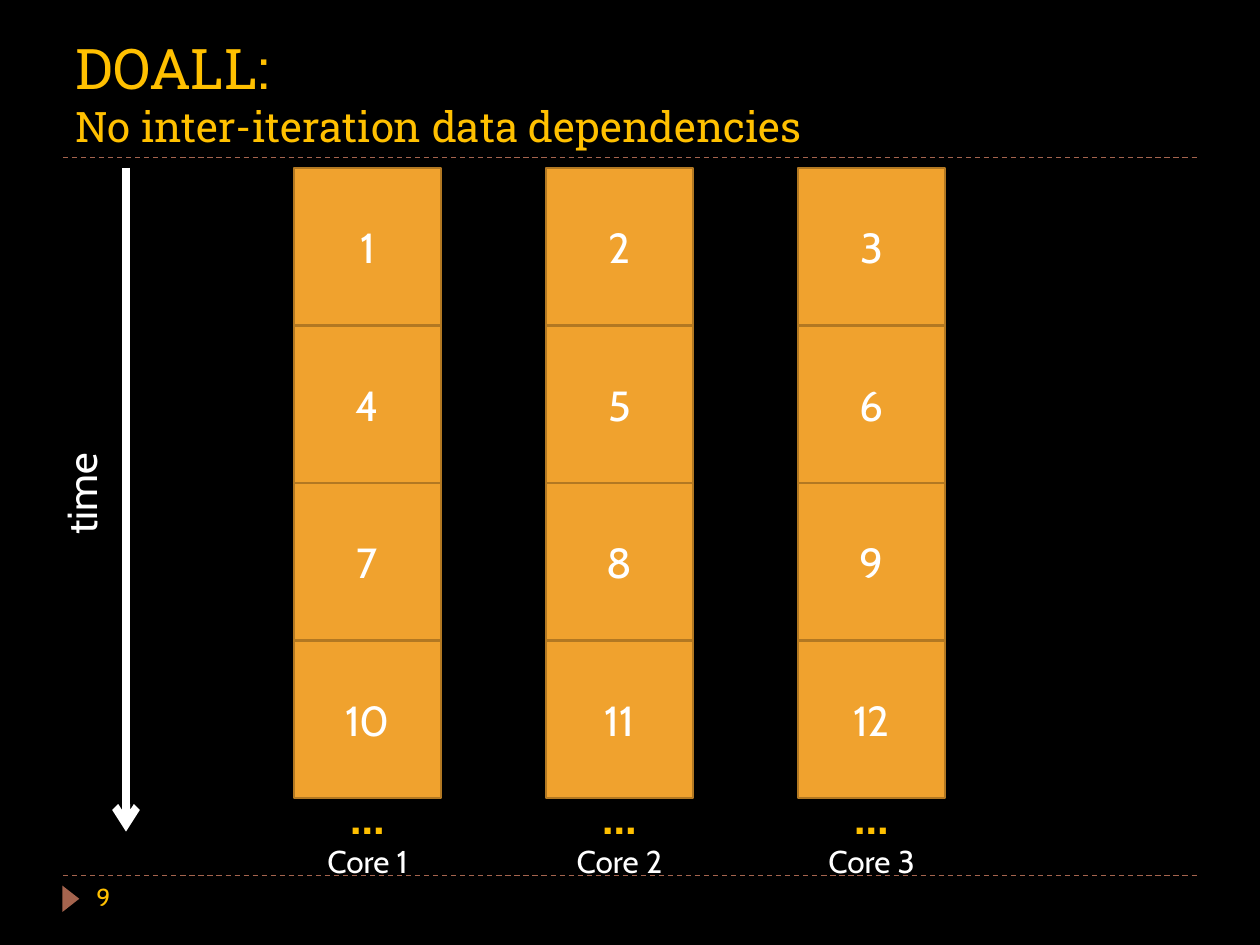
from lxml import etree
from pptx import Presentation
from pptx import util as u
from pptx.dml.color import RGBColor
from pptx.enum import dml, shapes, text
from pptx.oxml.ns import qn

COLORS = {"bg": "000000", "accent": "FFC000", "rule": "A5644E",
          "block": "F0A22E", "edge": "B27822", "light": "FFFFFF"}
HEAD_FONT, BODY_FONT = "Roboto Slab", "Cabin"
UNIT = u.Inches(1) / 12          # grid of 120 columns by 90 rows
COLS, ROWS = 120, 90
CORES, STEPS = 3, 4


def rgb(name):
    return RGBColor.from_string(COLORS[name])


def grid(*cells):
    return [u.Emu(round(c * UNIT)) for c in cells]


def write(sp, content, size, color="light", font=BODY_FONT, bold=False,
          align=text.PP_ALIGN.LEFT, anchor=text.MSO_ANCHOR.TOP, wrap=True):
    """Write lines of one paragraph; size is one value or one per line."""
    tf = sp.text_frame
    tf.word_wrap, tf.vertical_anchor = wrap, anchor
    p = tf.paragraphs[0]
    p.alignment = align
    lines = content.split("\n")
    sizes = size if isinstance(size, list) else [size] * len(lines)
    for i, (line, points) in enumerate(zip(lines, sizes)):
        if i:
            p.add_line_break()
            # the break takes the height of the line before it
            br = p._p.findall(qn("a:br"))[-1]
            etree.SubElement(br, qn("a:rPr"), sz=str(sizes[i - 1] * 100))
        r = p.add_run()
        r.text = line
        r.font.size, r.font.name, r.font.bold = u.Pt(points), font, bold
        r.font.color.rgb = rgb(color)


def label(s, box, content, size, **fmt):
    sp = s.shapes.add_textbox(*grid(*box))
    write(sp, content, size, **fmt)
    return sp


def block(s, box, kind, fill, edge=None):
    sp = s.shapes.add_shape(kind, *grid(*box))
    sp.shadow.inherit = False
    sp.fill.solid()
    sp.fill.fore_color.rgb = rgb(fill)
    if edge:
        sp.line.color.rgb = rgb(edge)
        sp.line.width = u.Pt(1.5)
    else:
        sp.line.fill.background()
    return sp


def line(s, ends, color, width):
    sp = s.shapes.add_connector(shapes.MSO_CONNECTOR.STRAIGHT, *grid(*ends))
    sp.line.color.rgb = rgb(color)
    sp.line.width = u.Pt(width)
    etree.SubElement(sp._element.spPr, qn("a:effectLst"))
    return sp


def frame(s, x, y, w, h, number):
    # Dashed rules above and below the content
    for row in (y + h, y):
        rule = line(s, (x, row, x + w, row), "rule", 0.75)
        rule.line.dash_style = dml.MSO_LINE.DASH
    # Page marker and number
    marker = block(s, (x - 0.5, y + h + 1.4, 2.5, 1.6),
                   shapes.MSO_SHAPE.ISOSCELES_TRIANGLE, "rule")
    marker.rotation = 90
    label(s, (x + 2, y + h, 26, 4.8), number, 14, color="accent")


def core_column(s, x, y, w, h, core):
    # Iterations are dealt out to the cores in turn
    step = h / STEPS
    for i in range(STEPS):
        sp = block(s, (x, y + i * step, w, step),
                   shapes.MSO_SHAPE.RECTANGLE, "block", "edge")
        write(sp, str(i * CORES + core), 24, align=text.PP_ALIGN.CENTER,
              anchor=text.MSO_ANCHOR.MIDDLE)
    # Continuation mark and core name
    label(s, (x, y + h - 1.8, w, 6.8), "…", 28, color="accent", bold=True,
          align=text.PP_ALIGN.CENTER)
    label(s, (x, y + h + 3.6, w, 4.8), f"Core {core}", 18,
          align=text.PP_ALIGN.CENTER)


def time_axis(s, x, y, w, h):
    arrow = line(s, (x + w, y, x + w, y + h), "light", 4.5)
    etree.SubElement(arrow.line._get_or_add_ln(), qn("a:tailEnd"), type="arrow")
    sp = label(s, (x, y + 27.1, w, 9), "time", 24, wrap=False)
    sp.text_frame._txBody.bodyPr.set("vert", "vert270")


def main():
    prs = Presentation()
    prs.slide_width, prs.slide_height = grid(COLS, ROWS)
    s = prs.slides.add_slide(prs.slide_layouts[6])
    s.background.fill.solid()
    s.background.fill.fore_color.rgb = rgb("bg")

    frame(s, 6, 15, 108, 68.4, "9")
    label(s, (6, 2, 108, 13), "DOALL:\nNo inter-iteration data dependencies",
          [32, 24], color="accent", font=HEAD_FONT,
          anchor=text.MSO_ANCHOR.BOTTOM)
    for core in range(1, CORES + 1):
        core_column(s, 4 + 24 * core, 16, 14, 60, core)
    time_axis(s, 4.7, 16, 7.3, 63.2)
    prs.save("out.pptx")


if __name__ == "__main__":
    main()
